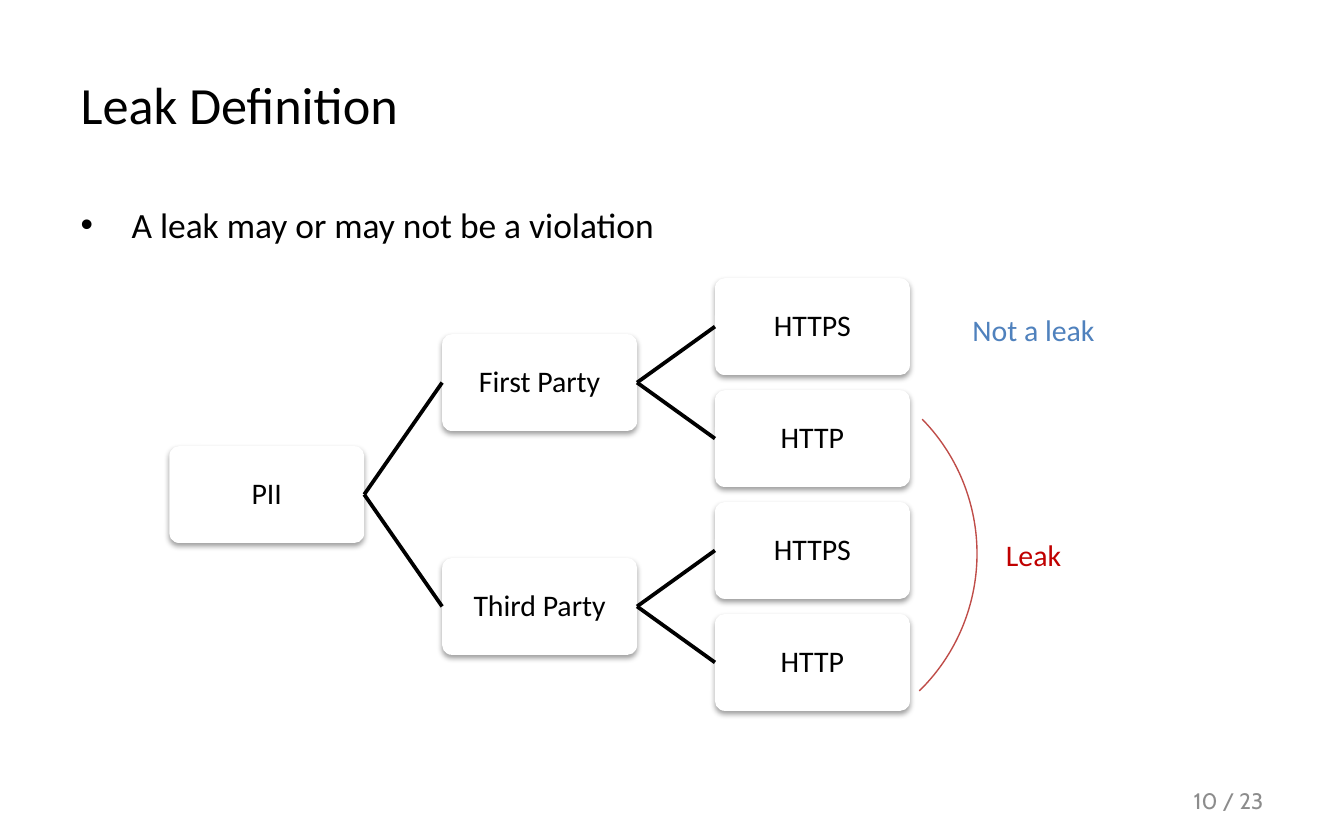
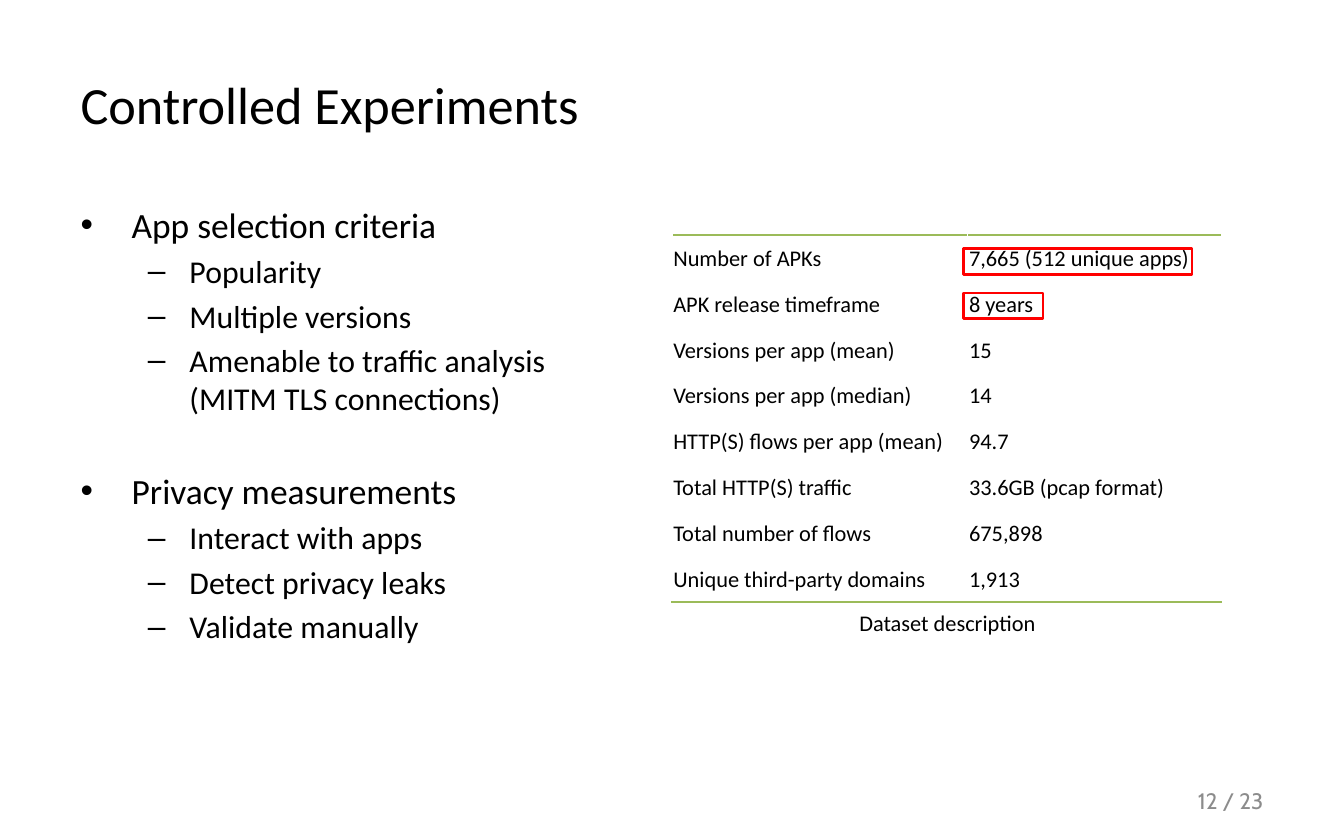
from lxml import etree
from pptx import Presentation
from pptx.dml.color import RGBColor
from pptx.enum.shapes import MSO_CONNECTOR as CONN, MSO_SHAPE as SHAPE
from pptx.enum.text import MSO_ANCHOR as ANCHOR, MSO_AUTO_SIZE as AUTO, PP_ALIGN as ALIGN
from pptx.oxml import parse_xml
from pptx.oxml.ns import nsdecls, qn
from pptx.util import Inches, Pt

BLACK, WHITE, GRAY = "000000", "FFFFFF", "8C8C8C"
BLUE, RED, ARC_RED, MARK_RED, GREEN = "4F81BD", "C00000", "BF4C48", "FF0000", "9BBB59"
LEFT, RIGHT = 1, 3  # connection sites
PAGES = 23


def rgb(color):
    return RGBColor.from_string(color)


class Deck:
    """Holds the presentation, its style and the current slide."""

    font = "Calibri"
    indents = [(0.38, -0.38), (0.81, -0.31)]
    sizes = [19, 17]

    def __init__(self):
        self.prs = Presentation()
        self.prs.slide_width, self.prs.slide_height = Inches(10), Inches(6.25)

    def place(self, sp, x, y, w, h):
        sp.left, sp.top, sp.width, sp.height = map(Inches, (x, y, w, h))

    def style(self, p, size, color=BLACK, font=None, align=None):
        p.font.size, p.font.name = Pt(size), font or self.font
        p.font.color.rgb = rgb(color)
        p.alignment = align

    def slide(self, title, page):
        self.s = self.prs.slides.add_slide(self.prs.slide_layouts[1])
        sp = self.s.shapes.title
        self.place(sp, 0.5, 0.25, 9, 1.04)
        tf = sp.text_frame
        tf.text, tf.auto_size, tf.vertical_anchor = title, AUTO.NONE, ANCHOR.MIDDLE
        self.style(tf.paragraphs[0], 28, align=ALIGN.LEFT)
        self.text(f"{page} / {PAGES}", 7.17, 5.79, 2.33, 0.33, 12, GRAY, "Cabin", ALIGN.RIGHT)

    def bullets(self, items, width=9):
        """Each item is (level, text); later top-level items start a new block."""
        sp = self.s.placeholders[1]
        self.place(sp, 0.5, 1.46, width, 4.12)
        tf = sp.text_frame
        tf.auto_size = AUTO.NONE
        for i, (level, text) in enumerate(items):
            p = tf.add_paragraph() if i else tf.paragraphs[0]
            p.text, p.level = text, level
            self.style(p, self.sizes[level])
            if i and level == 0:
                p.space_before = Pt(28)
            margin, hang = self.indents[level]
            pPr = p._p.get_or_add_pPr()
            pPr.set("marL", str(Inches(margin)))
            pPr.set("indent", str(Inches(hang)))

    def text(self, text, x, y, w, h, size, color=BLACK, font=None, align=ALIGN.CENTER):
        sp = self.s.shapes.add_textbox(*map(Inches, (x, y, w, h)))
        tf = sp.text_frame
        tf.word_wrap, tf.vertical_anchor, tf.text = True, ANCHOR.MIDDLE, text
        self.style(tf.paragraphs[0], size, color, font, align)

    def outline(self, kind, x, y, w, h, color, width):
        sp = self.s.shapes.add_shape(kind, *map(Inches, (x, y, w, h)))
        sp.shadow.inherit = False
        sp.fill.background()
        sp.line.color.rgb, sp.line.width = rgb(color), Pt(width)
        return sp

    def node(self, text, x, y, w=1.45, h=0.72):
        sp = self.s.shapes.add_shape(SHAPE.ROUNDED_RECTANGLE, *map(Inches, (x, y, w, h)))
        sp.adjustments[0] = 0.1
        sp.fill.solid()
        sp.fill.fore_color.rgb = rgb(WHITE)
        sp.line.fill.background()
        sp.shadow.inherit = False
        effects = sp._element.spPr.find(qn("a:effectLst"))
        effects.append(parse_xml(
            f'<a:outerShdw {nsdecls("a")} blurRad="{Pt(3.1)}" dist="{Pt(1.6)}" dir="5400000" '
            f'rotWithShape="0"><a:srgbClr val="{BLACK}"><a:alpha val="38000"/></a:srgbClr>'
            '</a:outerShdw>'))
        tf = sp.text_frame
        tf.margin_left = tf.margin_right = tf.margin_top = tf.margin_bottom = Inches(0.03)
        tf.vertical_anchor, tf.text = ANCHOR.MIDDLE, text
        p = tf.paragraphs[0]
        self.style(p, 16, align=ALIGN.CENTER)
        p.line_spacing = 0.9
        return sp

    def branch(self, parent, child):
        c = self.s.shapes.add_connector(CONN.STRAIGHT, 0, 0, 0, 0)
        c.begin_connect(parent, RIGHT)
        c.end_connect(child, LEFT)
        c.line.color.rgb, c.line.width = rgb(BLACK), Pt(2)
        etree.SubElement(c._element.spPr, qn("a:effectLst"))

    def border(self, cell, side, color):
        cell._tc.get_or_add_tcPr().insert(0, parse_xml(
            f'<a:{side} {nsdecls("a")} w="{Pt(1)}"><a:solidFill><a:srgbClr val="{color}"/>'
            f'</a:solidFill></a:{side}>'))

    def table(self, rows, x, y, widths, height):
        frame = self.s.shapes.add_table(len(rows), len(widths), Inches(x), Inches(y),
                                        Inches(sum(widths)), Inches(height))
        tbl = frame.table
        tbl.first_row = tbl.horz_banding = False
        for col, w in zip(tbl.columns, widths):
            col.width = Inches(w)
        for i, row in enumerate(rows):
            for j, text in enumerate(row):
                cell = tbl.cell(i, j)
                cell.text, cell.vertical_anchor = text, ANCHOR.MIDDLE
                cell.margin_left = cell.margin_right = cell.margin_top = Inches(0.01)
                cell.margin_bottom = 0
                cell.fill.background()
                self.style(cell.text_frame.paragraphs[0], 12)
                if i == 0:
                    self.border(cell, "lnT", GREEN)
                if i == len(rows) - 1:
                    self.border(cell, "lnB", GREEN)


def leak_definition(d):
    d.slide("Leak Definition", 10)
    d.bullets([(0, "A leak may or may not be a violation")], 9.07)

    # Decision tree: each parent sits midway between its children
    top, step = 2.07, 0.833
    root = d.node("PII", 1.26, top + 1.5 * step)
    for i, party in enumerate(["First Party", "Third Party"]):
        parent = d.node(party, 3.29, top + (2 * i + 0.5) * step)
        d.branch(root, parent)
        for j, protocol in enumerate(["HTTPS", "HTTP"]):
            d.branch(parent, d.node(protocol, 5.32, top + (2 * i + j) * step))

    # Verdicts
    d.outline(SHAPE.ARC, 4.41, 2.69, 2.86, 2.86, ARC_RED, 0.75).rotation = 45.6
    d.text("Not a leak", 6.2, 2.27, 2.98, 0.37, 16, BLUE)
    d.text("Leak", 6.2, 3.94, 2.98, 0.37, 16, RED)


def controlled_experiments(d):
    d.slide("Controlled Experiments", 12)
    d.bullets([
        (0, "App selection criteria"),
        (1, "Popularity"),
        (1, "Multiple versions"),
        (1, "Amenable to traffic analysis\v(MITM TLS connections)"),
        (0, "Privacy measurements"),
        (1, "Interact with apps"),
        (1, "Detect privacy leaks"),
        (1, "Validate manually"),
    ])

    # Dataset table and caption
    d.table([
        ("Number of APKs", "7,665 (512 unique apps)"),
        ("APK release timeframe", "8 years"),
        ("Versions per app (mean)", "15"),
        ("Versions per app (median)", "14"),
        ("HTTP(S) flows per app (mean)", "94.7"),
        ("Total HTTP(S) traffic", "33.6GB (pcap format)"),
        ("Total number of flows", "675,898"),
        ("Unique third-party domains", "1,913"),
    ], 5, 1.75, [2.2, 1.89], 2.73)
    d.text("Dataset description", 5.56, 4.48, 2.98, 0.3, 12)

    # Highlighted values
    for y, w in [(1.85, 1.7), (2.18, 0.59)]:
        d.outline(SHAPE.RECTANGLE, 7.17, y, w, 0.19, MARK_RED, 1.5)


def main():
    d = Deck()
    leak_definition(d)
    controlled_experiments(d)
    d.prs.save("out.pptx")


if __name__ == "__main__":
    main()
